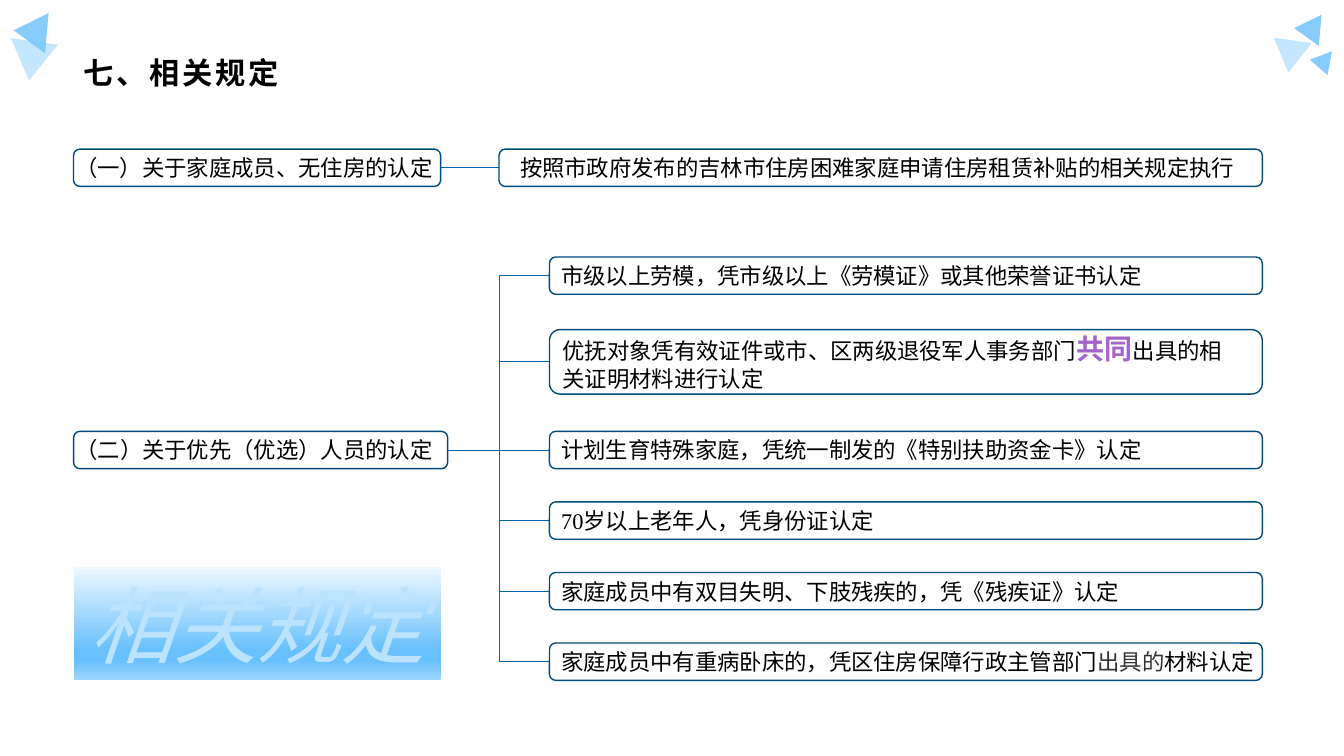
from copy import deepcopy
from dataclasses import dataclass

from lxml import etree
from pptx import Presentation
from pptx import util as u
from pptx.dml.color import RGBColor
from pptx.enum import shapes, text
from pptx.oxml.ns import qn


@dataclass(frozen=True)
class Theme:
    ink: str = "000000"
    grey: str = "333333"
    accent: str = "A663CC"
    border: str = "014A7C"
    link: str = "0264A8"
    sky: str = "79C7FD"
    pale: str = "BCE3FE"
    banner: tuple = ((0, "EEF8FF"), (0.74, "68C0FD"), (0.83, "68C0FD"), (1, "9AD5FE"))
    cjk: str = "Noto Sans CJK SC"
    latin: str = "Arial"
    serif: str = "Times New Roman"
    title: float = 21.6
    body: float = 16
    strong: float = 20
    display: float = 60


theme = Theme()


def add_span(para, words, size=theme.body, color=theme.ink, font=theme.cjk, bold=False):
    span = para.add_run()
    span.text = words
    span.font.size = u.Pt(size)
    span.font.bold = bold
    span.font.name = font
    span.font.color.rgb = RGBColor.from_string(color)
    east_asian = etree.SubElement(span._r.get_or_add_rPr(), qn("a:ea"))
    east_asian.set("typeface", theme.cjk)
    return span


def add_shape(page, kind, left, top, width, height):
    shape = page.shapes.add_shape(kind, *map(u.Inches, (left, top, width, height)))
    shape.shadow.inherit = False
    shape.line.fill.background()
    frame = shape.text_frame
    frame.word_wrap = True
    frame.vertical_anchor = text.MSO_ANCHOR.MIDDLE
    frame.margin_top = frame.margin_bottom = 0
    return shape


deck = Presentation()
deck.slide_width, deck.slide_height = u.Inches(13.33), u.Inches(7.5)
page = deck.slides.add_slide(deck.slide_layouts[5])

# Grid: columns and rows in inches
label_x, trunk_x, item_x, right_x = 0.73, 4.95, 5.45, 12.52
row_h, row_step = 0.37, 0.7
first_y, second_y = 1.48, 4.28
label_w = 3.64

# Corner triangles: left, top, width, height, rotation, opacity in percent
triangles = [
    (0.08, 0.41, 0.47, 0.39, 187.9, 44),
    (0.1, 0.15, 0.4, 0.33, 275, 90),
    (12.81, 0.16, 0.31, 0.26, 275, 90),
    (12.61, 0.4, 0.38, 0.32, 187.9, 44),
    (12.97, 0.51, 0.24, 0.2, 280.2, 90),
]
for *place, turn, opacity in triangles:
    triangle = add_shape(page, shapes.MSO_SHAPE.ISOSCELES_TRIANGLE, *place)
    triangle.rotation = turn
    triangle.fill.solid()
    triangle.fill.fore_color.rgb = RGBColor.from_string(theme.sky)
    color = triangle._element.spPr.find(qn("a:solidFill"))[0]
    etree.SubElement(color, qn("a:alpha")).set("val", str(opacity * 1000))

# Title
title = page.shapes.title
title.left, title.top, title.width, title.height = map(u.Inches, (0.73, 0.48, 11.87, 0.48))
title.text_frame.auto_size = text.MSO_AUTO_SIZE.NONE
title.text_frame.vertical_anchor = text.MSO_ANCHOR.MIDDLE
para = title.text_frame.paragraphs[0]
para.alignment = text.PP_ALIGN.LEFT
span = add_span(para, "七、相关规定", theme.title, font=theme.latin, bold=True)
span._r.get_or_add_rPr().set("spc", "200")

# Items of the second rule: top, height, right inset, text runs
items = [
    (2.55, row_h, 0, [("市级以上劳模，凭市级以上《劳模证》或其他荣誉证书认定", {})]),
    (3.27, 0.64, 0.3, [
        ("优抚对象凭有效证件或市、区两级退役军人事务部门", {}),
        ("共同", {"size": theme.strong, "color": theme.accent, "bold": True}),
        ("出具的相关证明材料进行认定", {}),
    ]),
]
lower_items = [
    [("计划生育特殊家庭，凭统一制发的《特别扶助资金卡》认定", {})],
    [("70", {"font": theme.serif}), ("岁以上老年人，凭身份证认定", {})],
    [("家庭成员中有双目失明、下肢残疾的，凭《残疾证》认定", {})],
    [("家庭成员中有重病卧床的，凭区住房保障行政主管部门", {}),
     ("出具的", {"color": theme.grey}), ("材料认定", {})],
]
items += [(second_y + n * row_step, row_h, 0, runs) for n, runs in enumerate(lower_items)]

# Connecting lines: two stems, the trunk and one branch per item
middles = [top + height / 2 for top, height, *_ in items]
first_mid, second_mid = first_y + row_h / 2, second_y + row_h / 2
lines = [
    (label_x + label_w, first_mid, trunk_x, first_mid),
    (4.44, second_mid, trunk_x, second_mid),
    (trunk_x, middles[0], trunk_x, middles[-1]),
]
lines += [(trunk_x, y, item_x, y) for y in middles]
for ends in lines:
    link = page.shapes.add_connector(shapes.MSO_CONNECTOR.STRAIGHT, *map(u.Inches, ends))
    link.line.color.rgb = RGBColor.from_string(theme.link)
    link.line.width = u.Pt(0.5)
    etree.SubElement(link._element.spPr, qn("a:effectLst"))

# Outlined boxes: left, top, width, height, left inset, right inset, runs
boxes = [
    (label_x, first_y, label_w, row_h, 0, 0, [("（一）关于家庭成员、无住房的认定", {})]),
    (trunk_x, first_y, right_x - trunk_x, row_h, 0.19, 0,
     [("按照市政府发布的吉林市住房困难家庭申请住房租赁补贴的相关规定执行", {})]),
    (label_x, second_y, 3.71, row_h, 0, 0, [("（二）关于优先（优选）人员的认定", {})]),
]
boxes += [(item_x, top, right_x - item_x, height, 0.1, inset, runs)
          for top, height, inset, runs in items]
for *place, inset_left, inset_right, runs in boxes:
    box = add_shape(page, shapes.MSO_SHAPE.ROUNDED_RECTANGLE, *place)
    box.fill.background()
    box.line.color.rgb = RGBColor.from_string(theme.border)
    box.line.width = u.Pt(1)
    box.text_frame.margin_left = u.Inches(inset_left)
    box.text_frame.margin_right = u.Inches(inset_right)
    para = box.text_frame.paragraphs[0]
    para.alignment = text.PP_ALIGN.LEFT
    for words, style in runs:
        add_span(para, words, **style)

# Gradient banner
banner = add_shape(page, shapes.MSO_SHAPE.RECTANGLE, label_x, 5.63, label_w, 1.11)
banner.fill.gradient()
banner.fill.gradient_angle = 270
stop_list = banner._element.spPr.find(qn("a:gradFill")).find(qn("a:gsLst"))
while len(stop_list) < len(theme.banner):
    stop_list.append(deepcopy(stop_list[0]))
for stop, (position, color) in zip(banner.fill.gradient_stops, theme.banner):
    stop.position = position
    stop.color.rgb = RGBColor.from_string(color)
para = banner.text_frame.paragraphs[0]
para.alignment = text.PP_ALIGN.CENTER
span = add_span(para, "相关规定", theme.display, theme.pale, theme.latin)
span.font.italic = True

deck.save("out.pptx")
